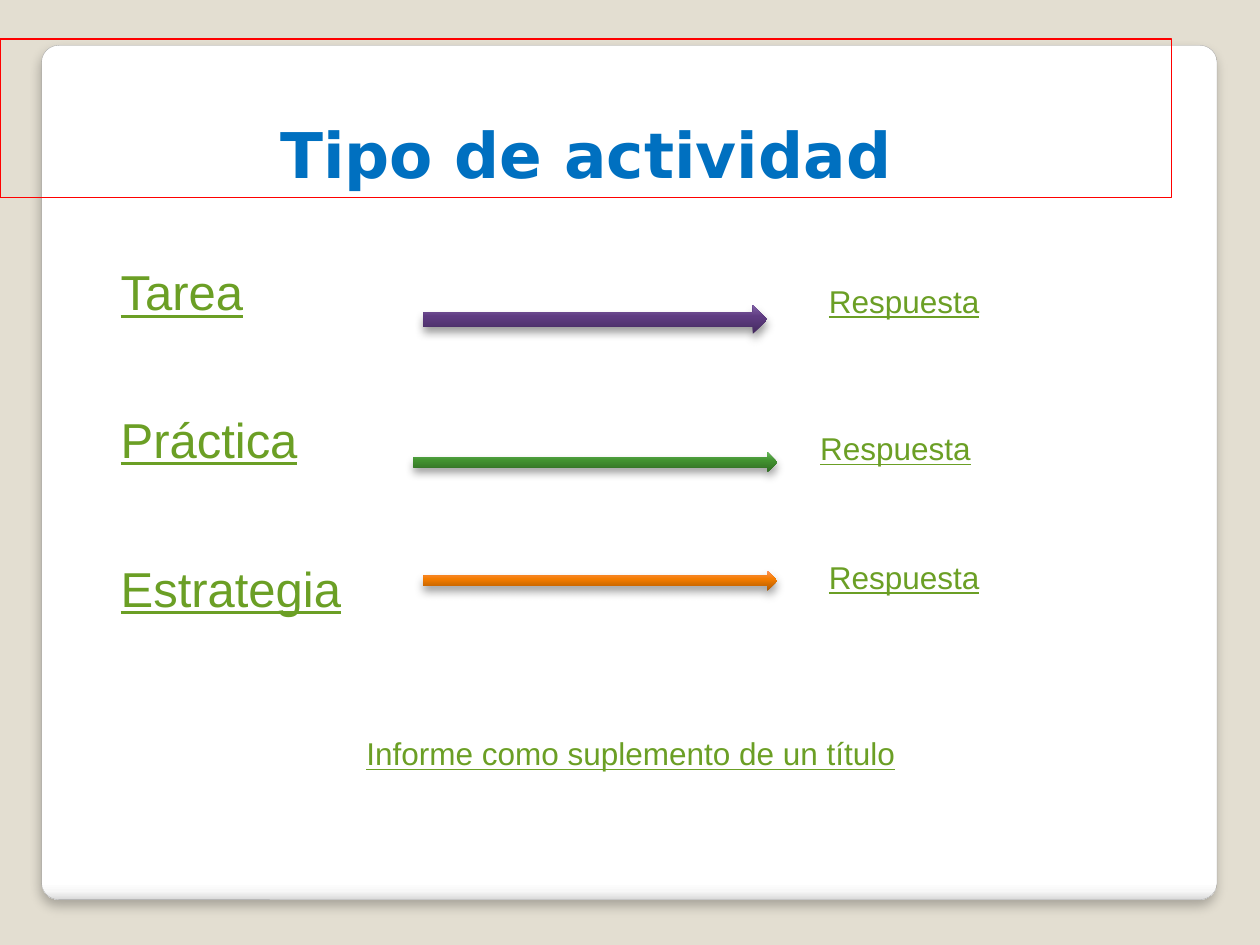
"""Build a slide that links each type of activity to its answer."""
from dataclasses import dataclass

from lxml.etree import SubElement
from pptx import Presentation
from pptx.dml.color import RGBColor
from pptx.enum.shapes import MSO_SHAPE
from pptx.enum.text import MSO_ANCHOR, PP_ALIGN
from pptx.oxml.ns import qn
from pptx.util import Inches, Pt


@dataclass(frozen=True)
class Theme:
    back: str = "E3DED1"
    edge: str = "A4A4A4"
    frame: str = "FF0000"
    head: str = "0070C0"
    link: str = "6B9F25"
    shade: str = "000000"
    panel: tuple = ((0, "FFFFFF"), (98, "FFFFFF"), (99, "F7F7F7"), (100, "DADADA"))
    purple: tuple = ((0, "442A5E"), (60, "5E3B81"), (100, "8364A8"))
    green: tuple = ((0, "2F6B22"), (60, "429230"), (100, "66B959"))
    orange: tuple = ((0, "B05A00"), (60, "F47C00"), (100, "FF945C"))
    large: int = 36
    mid: int = 28
    small: int = 18


theme = Theme()
deck = Presentation()
deck.slide_width, deck.slide_height = Inches(10), Inches(7.5)
slide = deck.slides.add_slide(deck.slide_layouts[6])
slide.background.fill.solid()
slide.background.fill.fore_color.rgb = RGBColor.from_string(theme.back)


def add_form(kind, box, stops, angle, alpha, blur, dist):
    form = slide.shapes.add_shape(kind, *map(Inches, box))
    form.fill.gradient()
    form.fill.gradient_angle = angle
    form.line.fill.background()
    form.shadow.inherit = False
    props = form.fill._xPr
    table = props.find(qn("a:gradFill")).find(qn("a:gsLst"))
    for old in list(table):
        table.remove(old)
    for place, color in stops:
        stop = SubElement(table, qn("a:gs"), pos=str(place * 1000))
        SubElement(stop, qn("a:srgbClr"), val=color)
    shade = SubElement(
        props.find(qn("a:effectLst")), qn("a:outerShdw"),
        blurRad=str(Pt(blur)), dist=str(Pt(dist)), dir="5400000",
        algn="ctr", rotWithShape="0")
    tint = SubElement(shade, qn("a:srgbClr"), val=theme.shade)
    SubElement(tint, qn("a:alpha"), val=str(alpha * 1000))
    return form


def add_text(text, box, size, color, face="Arial"):
    label = slide.shapes.add_textbox(*map(Inches, box))
    para = label.text_frame.paragraphs[0]
    para.text = text
    para.font.name, para.font.size = face, Pt(size)
    para.font.color.rgb = RGBColor.from_string(color)
    para.font.underline = color == theme.link
    return label


panel = add_form(MSO_SHAPE.ROUNDED_RECTANGLE, (0.33, 0.36, 9.33, 6.78),
                 theme.panel, 270, 25, 6, 4)
panel.adjustments[0] = 0.02
panel.line.color.rgb = RGBColor.from_string(theme.edge)
panel.line.width = Pt(0.16)

title = add_text("Tipo de actividad", (0, 0.31, 9.3, 1.26),
                 theme.large, theme.head, "DejaVu Sans")
title.line.color.rgb = RGBColor.from_string(theme.frame)
title.line.width = Pt(0.75)
title.text_frame.word_wrap = True
title.text_frame.vertical_anchor = MSO_ANCHOR.BOTTOM
title.text_frame.paragraphs[0].alignment = PP_ALIGN.CENTER
title.text_frame.paragraphs[0].font.bold = True

rows = (
    ("Tarea", (0.86, 2.03, 1.19, 0.57), (6.48, 2.19),
     (3.36, 2.42, 2.73, 0.23), theme.purple),
    ("Práctica", (0.86, 3.2, 1.73, 0.57), (6.41, 3.36),
     (3.28, 3.59, 2.89, 0.16), theme.green),
    ("Estrategia", (0.86, 4.38, 1.97, 0.57), (6.48, 4.38),
     (3.36, 4.53, 2.81, 0.16), theme.orange),
)
for name, place, reply, arrow, stops in rows:
    add_text(name, place, theme.mid, theme.link)
    add_text("Respuesta", (*reply, 1.41, 0.4), theme.small, theme.link)
    add_form(MSO_SHAPE.RIGHT_ARROW, arrow, stops, 90, 40, 5.2, 3)

add_text("Informe como suplemento de un título", (2.81, 5.78, 4.44, 0.4),
         theme.small, theme.link)

deck.save("out.pptx")
